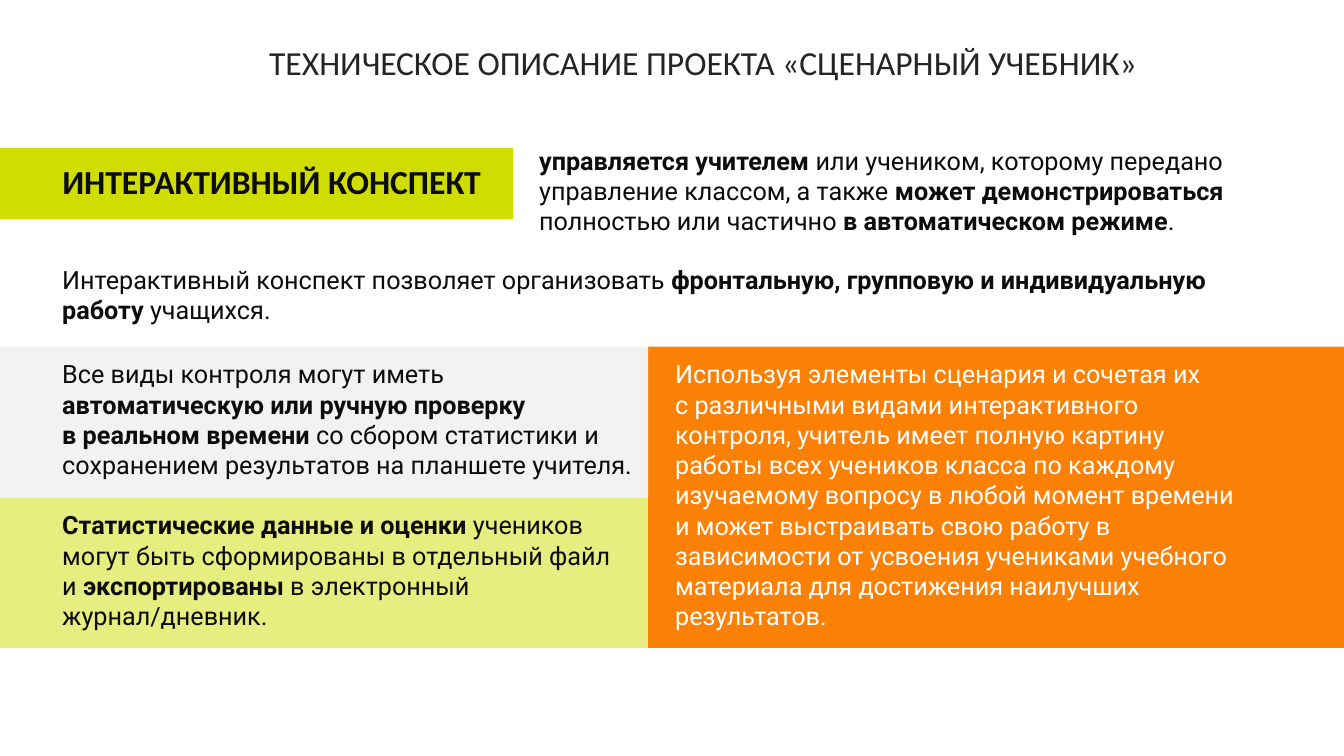
from pptx import Presentation
from pptx.dml.color import RGBColor
from pptx.enum.shapes import MSO_SHAPE as Shape
from pptx.enum.text import MSO_ANCHOR as Anchor, MSO_AUTO_SIZE as AutoSize, PP_ALIGN as Align
from pptx.oxml.ns import qn
from pptx.util import Pt
from lxml.etree import SubElement

WIDTH, HEIGHT = 960, 540
MARGIN = 37.4
PANEL_TOP, PANEL_HEIGHT, SPLIT = 247.7, 107.6, 463

INK, WHITE, LIME, ORANGE, GREY = "0C0C0C", "FFFFFF", "CFDE00", "FA8006", "F2F2F2"
HEADING = {"name": "Calibri", "size": Pt(24)}
BODY = {"name": "Roboto", "size": Pt(18)}


def color(hex_value):
    return RGBColor.from_string(hex_value)


def set_format(target, values):
    for name, value in values.items():
        setattr(target, name, value)


def add_panel(slide, left, top, width, height, fill, opacity=100):
    shape = slide.shapes.add_shape(Shape.RECTANGLE, Pt(left), Pt(top), Pt(width), Pt(height))
    shape.shadow.inherit = False
    shape.fill.solid()
    shape.fill.fore_color.rgb = color(fill)
    shape.line.fill.background()
    if opacity < 100:
        fill_color = shape._element.spPr.find(qn("a:solidFill"))[0]
        SubElement(fill_color, qn("a:alpha"), val=str(opacity * 1000))


def write_paragraph(paragraph, text, font, text_color, **spacing):
    """Write text, with the parts between ** marks in bold."""
    set_format(paragraph, {"alignment": Align.LEFT, **spacing})
    for index, part in enumerate(text.split("**")):
        if part:
            run = paragraph.add_run()
            run.text = part
            set_format(run.font, {**font, "bold": index % 2 == 1})
            run.font.color.rgb = color(text_color)


def format_frame(frame):
    set_format(frame, {"word_wrap": True, "auto_size": AutoSize.NONE,
                       "vertical_anchor": Anchor.TOP})


def add_text(slide, left, top, width, height, paragraphs, font=BODY):
    """Each paragraph is a text, a colour and a dict of spacing."""
    frame = slide.shapes.add_textbox(Pt(left), Pt(top), Pt(width), Pt(height)).text_frame
    format_frame(frame)
    for index, (text, text_color, spacing) in enumerate(paragraphs):
        paragraph = frame.add_paragraph() if index else frame.paragraphs[0]
        write_paragraph(paragraph, text, font, text_color, **spacing)
    return frame


def set_columns(frame, count, gap):
    body = frame._txBody.find(qn("a:bodyPr"))
    body.set("numCol", str(count))
    body.set("spcCol", str(Pt(gap)))


def add_title(slide, text):
    title = slide.shapes.title
    set_format(title, {"left": Pt(185), "top": Pt(26), "width": Pt(657), "height": Pt(46)})
    format_frame(title.text_frame)
    write_paragraph(title.text_frame.paragraphs[0], text, HEADING, "242424")


def main():
    presentation = Presentation()
    set_format(presentation, {"slide_width": Pt(WIDTH), "slide_height": Pt(HEIGHT)})
    slide = presentation.slides.add_slide(presentation.slide_layouts[5])
    add_title(slide, "ТЕХНИЧЕСКОЕ ОПИСАНИЕ ПРОЕКТА «СЦЕНАРНЫЙ УЧЕБНИК»")

    # Coloured panels
    add_panel(slide, SPLIT, PANEL_TOP, WIDTH - SPLIT, 2 * PANEL_HEIGHT, ORANGE)
    add_panel(slide, 0, PANEL_TOP + PANEL_HEIGHT, SPLIT, PANEL_HEIGHT, LIME, opacity=50)
    add_panel(slide, 0, PANEL_TOP, SPLIT, PANEL_HEIGHT, GREY)
    add_panel(slide, 0, 105.8, 366.5, 51, LIME)

    # Heading with its definition
    add_text(slide, MARGIN, 111.6, 323, 36,
             [("**ИНТЕРАКТИВНЫЙ КОНСПЕКТ**", INK, {})], HEADING)
    add_text(slide, 378, 100, 572.4, 79, [(
        "**управляется учителем **или учеником, которому передано управление классом, "
        "а также **может демонстрироваться **полностью или частично "
        "**в автоматическом режиме**.", INK, {})])
    add_text(slide, MARGIN, 185, 873.4, 51, [(
        "Интерактивный конспект позволяет организовать "
        "**фронтальную, групповую и индивидуальную работу **учащихся.", INK, {})])

    # Two-column text over the panels
    details = add_text(slide, MARGIN, 252.7, 861.8, 209.5, [
        ("Все виды контроля могут иметь **автоматическую или ручную проверку**", INK, {}),
        ("**в реальном времени **со сбором статистики и сохранением результатов "
         "на планшете учителя.", INK, {}),
        ("**Статистические данные и оценки **учеников могут быть сформированы "
         "в отдельный файл", INK, {"space_before": Pt(21.5)}),
        ("и **экспортированы** в электронный журнал/дневник.", INK, {}),
        ("Используя элементы сценария и сочетая их", WHITE, {}),
        ("с различными видами интерактивного контроля, учитель имеет полную картину "
         "работы всех учеников класса по каждому изучаемому вопросу в любой момент "
         "времени и может выстраивать свою работу в зависимости от усвоения учениками "
         "учебного материала для достижения наилучших результатов.", WHITE, {}),
    ])
    set_columns(details, 2, 28)

    presentation.save("out.pptx")


if __name__ == "__main__":
    main()
